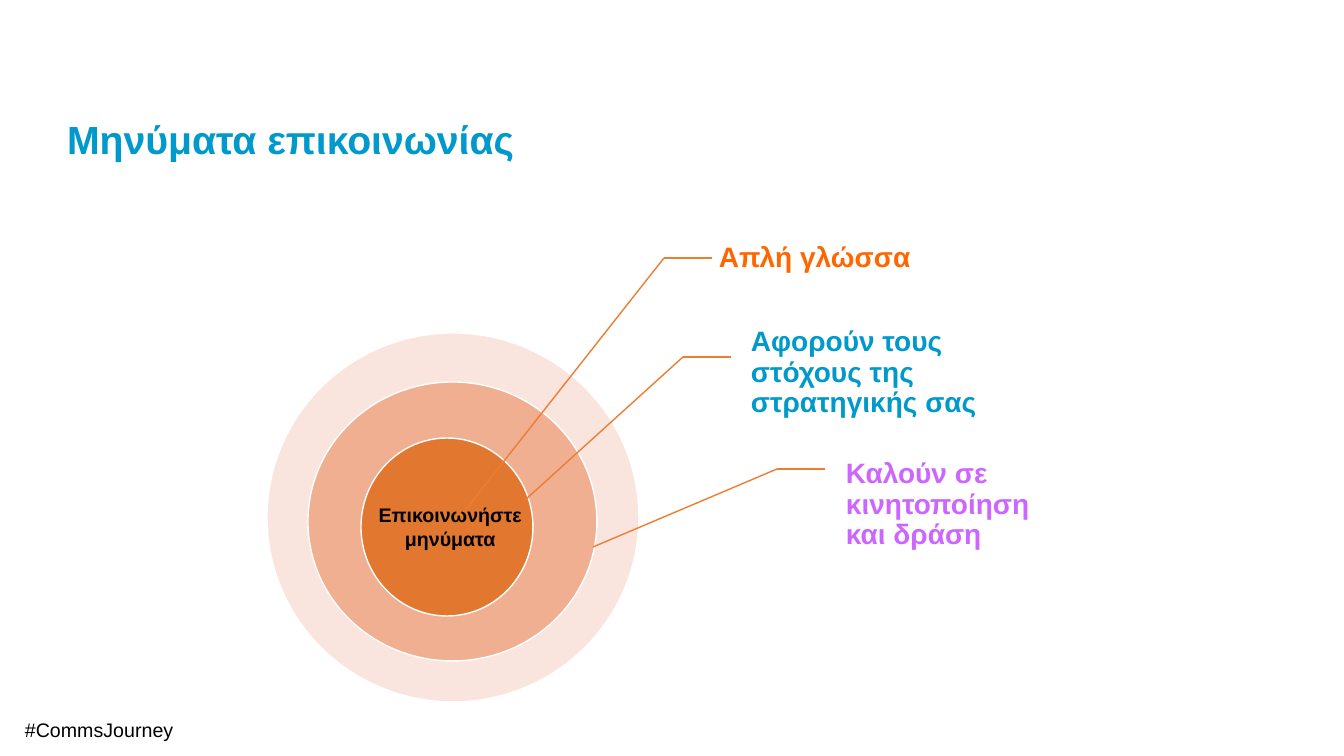
from lxml.etree import SubElement
from pptx import Presentation
from pptx.dml.color import RGBColor
from pptx.enum.shapes import MSO_CONNECTOR, MSO_SHAPE
from pptx.enum.text import MSO_ANCHOR, PP_ALIGN
from pptx.oxml.ns import qn
from pptx.util import Emu, Pt

TITLE = "Μηνύματα επικοινωνίας"
HASHTAG = "#CommsJourney"
CORE_TEXT = "Επικοινωνήστε \vμηνύματα "
RINGS = [
    {"box": (267, 333, 372, 369), "fill": "F6CCBF", "alpha": 50},
    {"box": (308, 382, 289, 279), "fill": "EC9D77", "alpha": 75},
    {"box": (361, 438, 172, 178), "fill": "E2772F", "alpha": 100},
]
MESSAGES = [
    {"text": "Απλή γλώσσα", "color": "FF6600", "box": (703, 202, 271, 112),
     "elbow": (664, 258), "target": (456, 522)},
    {"text": "Αφορούν τους στόχους της στρατηγικής σας", "color": "0099CC",
     "box": (735, 317, 247, 112), "elbow": (683, 357), "target": (524, 501)},
    {"text": "Καλούν σε κινητοποίηση και δράση", "color": "CC66FF",
     "box": (830, 449, 234, 112), "elbow": (777, 469), "target": (593, 547)},
]
TICK = 48
LEADER_COLOR = "ED7D31"
FONT = "Arial"


def px(*lengths):
    """Turn pixel lengths into EMU."""
    return [Emu(round(length * 914400 / 100.8)) for length in lengths]


def rgb(color):
    """Turn a hex string into a colour."""
    return RGBColor.from_string(color)


def write(frame, text, size, color, bold=True, align=PP_ALIGN.LEFT):
    """Fill a text frame with one formatted paragraph."""
    frame.word_wrap = True
    frame.text = text
    paragraph = frame.paragraphs[0]
    paragraph.alignment = align
    for run in paragraph.runs:
        run.font.name = FONT
        run.font.size = Pt(size)
        run.font.bold = bold
        run.font.color.rgb = rgb(color)
    return paragraph


def add_ring(slide, box, fill, alpha):
    """Draw one circle of the target."""
    ring = slide.shapes.add_shape(MSO_SHAPE.OVAL, *px(*box))
    ring.shadow.inherit = False
    ring.fill.solid()
    ring.fill.fore_color.rgb = rgb(fill)
    if alpha < 100:
        tint = ring.fill._xPr.find(qn("a:solidFill"))[0]
        SubElement(tint, qn("a:alpha"), val=str(alpha * 1000))
    ring.line.color.rgb = rgb("FFFFFF")
    ring.line.width = Pt(1)


def add_leader(slide, start, end):
    """Draw one straight piece of a leader line."""
    leader = slide.shapes.add_connector(MSO_CONNECTOR.STRAIGHT, *px(*start, *end))
    leader.line.color.rgb = rgb(LEADER_COLOR)
    leader.line.width = Pt(1)
    SubElement(leader._element.spPr, qn("a:effectLst"))


def add_message(slide, text, color, box, elbow, target):
    """Draw a message label with its leader line."""
    frame = slide.shapes.add_textbox(*px(*box)).text_frame
    write(frame, text, 20, color).line_spacing = 0.9
    frame.vertical_anchor = MSO_ANCHOR.MIDDLE
    frame.margin_left, frame.margin_right, frame.margin_top, frame.margin_bottom = px(16, 3, 3, 3)
    add_leader(slide, elbow, (elbow[0] + TICK, elbow[1]))
    add_leader(slide, elbow, target)


def main():
    """Build the slide and save it."""
    deck = Presentation()
    deck.slide_width, deck.slide_height = px(1344, 756)
    slide = deck.slides.add_slide(deck.slide_layouts[5])

    title = slide.shapes.title
    title.left, title.top, title.width, title.height = px(57, 110, 690, 57)
    write(title.text_frame, TITLE, 28, "0099CC")
    title.text_frame.vertical_anchor = MSO_ANCHOR.TOP

    for ring in RINGS:
        add_ring(slide, **ring)
    for message in MESSAGES:
        add_message(slide, **message)

    core = slide.shapes.add_textbox(*px(314, 498, 278, 57))
    write(core.text_frame, CORE_TEXT, 14, "000000", align=PP_ALIGN.CENTER)
    hashtag = slide.shapes.add_textbox(*px(15, 713, 209, 34))
    write(hashtag.text_frame, HASHTAG, 14, "000000", bold=False)

    deck.save("out.pptx")


if __name__ == "__main__":
    main()
